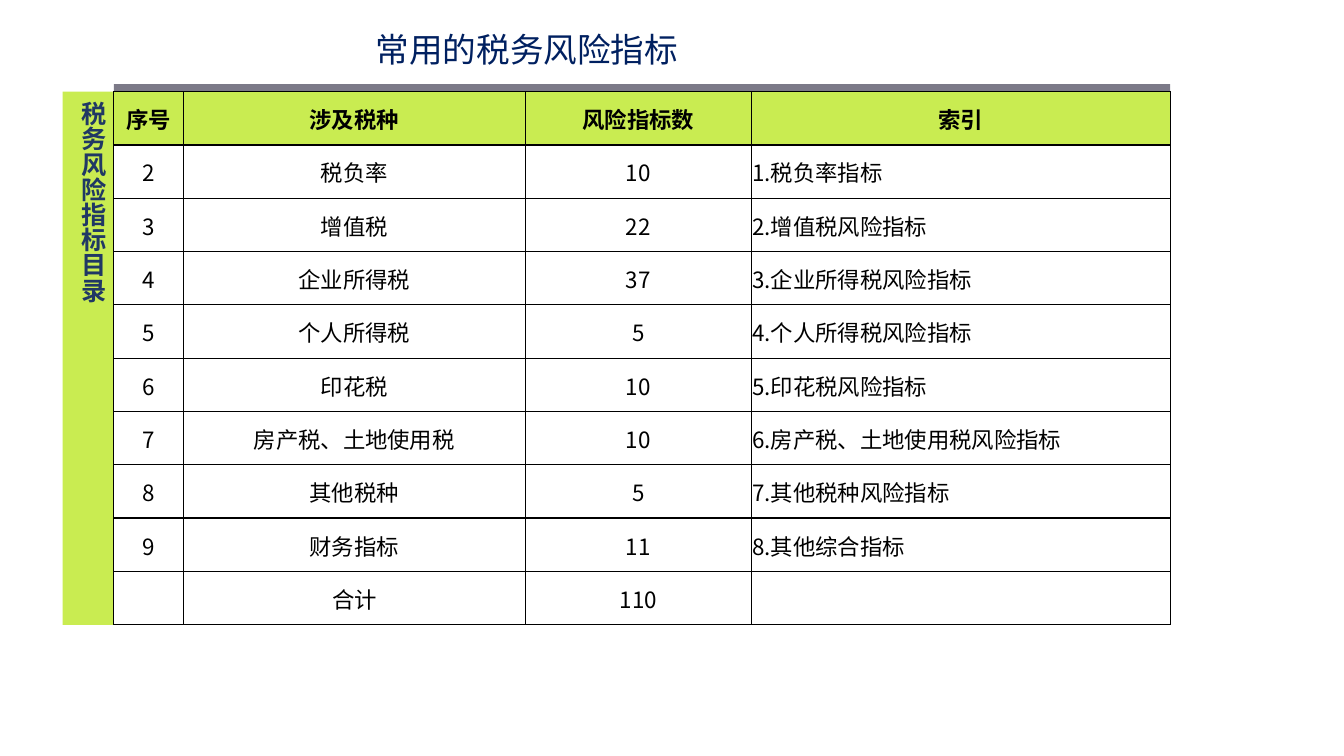
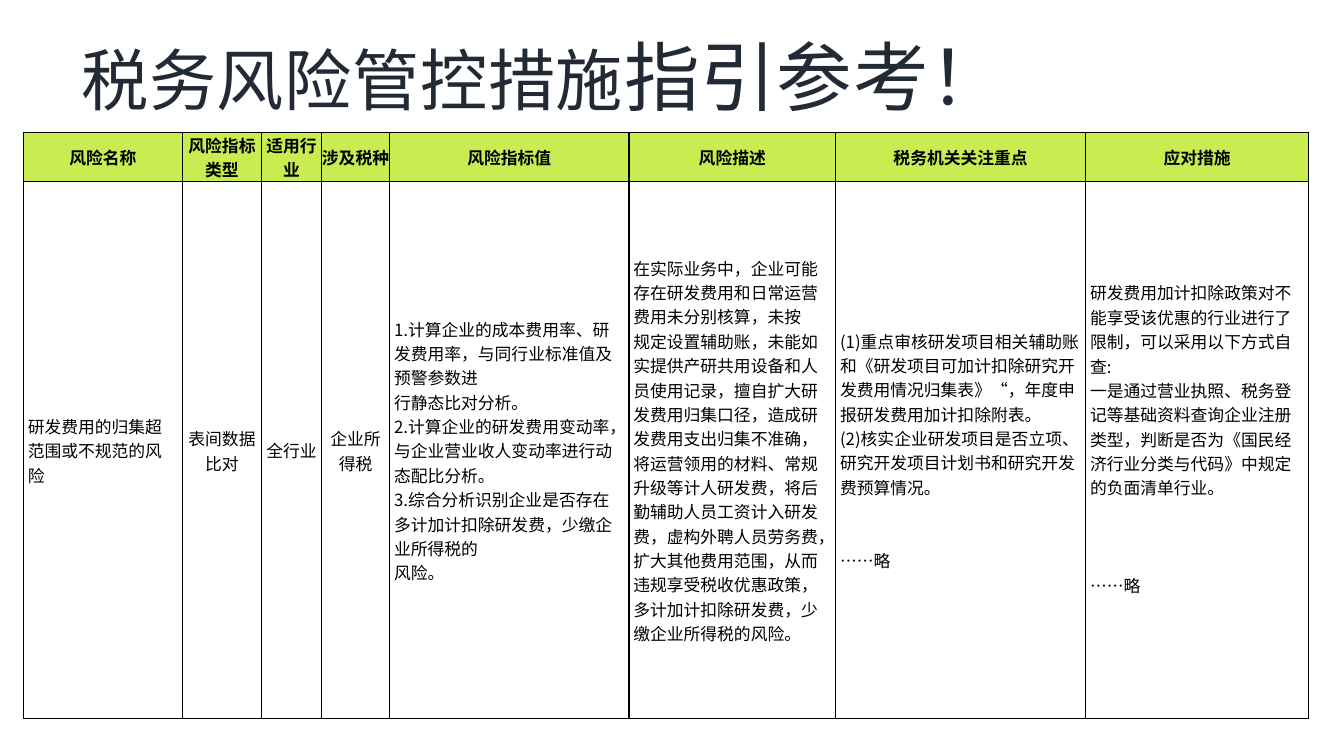
from lxml import etree
from pptx import Presentation
from pptx.dml.color import RGBColor
from pptx.enum.shapes import MSO_SHAPE
from pptx.enum.text import MSO_ANCHOR, PP_ALIGN
from pptx.oxml.ns import qn
from pptx.util import Cm, Pt

BLACK = RGBColor(0x00, 0x00, 0x00)
LIME = RGBColor(0xC9, 0xEC, 0x51)
GREY = RGBColor(0x7C, 0x7A, 0x88)
NAVY = RGBColor(0x00, 0x20, 0x60)
BLUE = RGBColor(0x20, 0x38, 0x64)
INK = RGBColor(0x22, 0x2A, 0x35)

RECTANGLE = MSO_SHAPE.RECTANGLE
TOP = MSO_ANCHOR.TOP
MIDDLE = MSO_ANCHOR.MIDDLE
LEFT = PP_ALIGN.LEFT
CENTER = PP_ALIGN.CENTER

SANS = "Noto Sans CJK SC"
LATIN = "Calibri"
BORDER_SIDES = ("a:lnL", "a:lnR", "a:lnT", "a:lnB")

INDEX_LEFT, INDEX_TOP, INDEX_HEIGHT = 2.87, 2.31, 13.44
INDEX_WIDTHS = (1.75, 8.62, 5.69, 10.56)
INDEX_ALIGNS = (CENTER, CENTER, CENTER, LEFT)
INDEX_HEADER = ("序号", "涉及税种", "风险指标数", "索引")
INDEX_ROWS = (
    ("2", "税负率", "10", "1.税负率指标"),
    ("3", "增值税", "22", "2.增值税风险指标"),
    ("4", "企业所得税", "37", "3.企业所得税风险指标"),
    ("5", "个人所得税", "5", "4.个人所得税风险指标"),
    ("6", "印花税", "10", "5.印花税风险指标"),
    ("7", "房产税、土地使用税", "10", "6.房产税、土地使用税风险指标"),
    ("8", "其他税种", "5", "7.其他税种风险指标"),
    ("9", "财务指标", "11", "8.其他综合指标"),
    ("", "合计", "110", ""),
)

GUIDE_WIDTHS = (4.01, 1.99, 1.51, 1.72, 6.03, 5.21, 6.3, 5.62)
GUIDE_HEIGHTS = (1.23, 13.54)
GUIDE_ALIGNS = (LEFT, CENTER, CENTER, CENTER, LEFT, LEFT, LEFT, LEFT)
GUIDE_HEADER = (
    "风险名称", "风险指标类型", "适用行业", "涉及税种",
    "风险指标值", "风险描述", "税务机关关注重点", "应对措施",
)
GUIDE_ROW = (
    "研发费用的归集超范围或不规范的风险",
    "表间数据比对",
    "全行业",
    "企业所得税",
    "1.计算企业的成本费用率、研发费用率，与同行业标准值及预警参数进\n"
    "行静态比对分析。\n"
    "2.计算企业的研发费用变动率，与企业营业收人变动率进行动态配比分析。\n"
    "3.综合分析识别企业是否存在多计加计扣除研发费，少缴企业所得税的\n"
    "风险。",
    "在实际业务中，企业可能存在研发费用和日常运营费用未分别核算，未按\n"
    "规定设置辅助账，未能如实提供产研共用设备和人员使用记录，"
    "擅自扩大研发费用归集口径，造成研发费用支出归集不准确，"
    "将运营领用的材料、常规升级等计人研发费，将后勤辅助人员工资计入研发费，"
    "虚构外聘人员劳务费，扩大其他费用范围，从而违规享受税收优惠政策，"
    "多计加计扣除研发费，少缴企业所得税的风险。",
    "(1)重点审核研发项目相关辅助账和《研发项目可加计扣除研究开发费用情况归集表》"
    "“，年度申报研发费用加计扣除附表。\n"
    "(2)核实企业研发项目是否立项、研究开发项目计划书和研究开发费预算情况。\n"
    "……略",
    "研发费用加计扣除政策对不能享受该优惠的行业进行了限制，可以采用以下方式自查:\n"
    "一是通过营业执照、税务登记等基础资料查询企业注册类型，"
    "判断是否为《国民经济行业分类与代码》中规定的负面清单行业。\n"
    "……略",
)
CLOSING_GAPS = {6: 35, 7: 52}
BOTTOM_MARGINS = {7: 0.6}


def set_attributes(target, values):
    for name, value in values.items():
        setattr(target, name, value)


def margins(side, top, bottom):
    return {
        "margin_left": Cm(side), "margin_right": Cm(side),
        "margin_top": Cm(top), "margin_bottom": Cm(bottom),
    }


def add_span(para, text, size, color, font=SANS, bold=False, spacing=0):
    span = para.add_run()
    span.text = text
    set_attributes(span.font, {"name": font, "size": Pt(size), "bold": bold})
    span.font.color.rgb = color
    properties = span.font._element
    etree.SubElement(properties, qn("a:ea"), typeface=font)
    if spacing:
        properties.set("spc", str(spacing))


def add_title(page, place, spans, color, spacing=0, line_spacing=1.0):
    box = page.shapes.add_textbox(*map(Cm, place))
    frame = box.text_frame
    values = {"word_wrap": True, "vertical_anchor": MIDDLE}
    set_attributes(frame, values | margins(0.25, 0, 0))
    para = frame.paragraphs[0]
    para.line_spacing = line_spacing
    for text, size in spans:
        add_span(para, text, size, color, spacing=spacing)


def add_band(page, place, color):
    band = page.shapes.add_shape(RECTANGLE, *map(Cm, place))
    band.shadow.inherit = False
    band.fill.solid()
    band.fill.fore_color.rgb = color
    band.line.fill.background()
    return band


def add_vertical_label(band, text):
    frame = band.text_frame
    frame.vertical_anchor = TOP
    frame._txBody.bodyPr.set("vert", "eaVert")
    para = frame.paragraphs[0]
    para.alignment = LEFT
    add_span(para, text, 18, BLUE, font=LATIN, bold=True)


def add_borders(cell):
    properties = cell._tc.get_or_add_tcPr()
    for side in BORDER_SIDES:
        line = etree.SubElement(properties, qn(side), w=str(Pt(1)))
        fill = etree.SubElement(line, qn("a:solidFill"))
        etree.SubElement(fill, qn("a:srgbClr"), val=str(BLACK))


def fill_cell(cell, text, align, size, insets, header):
    add_borders(cell)
    if header:
        cell.fill.solid()
        cell.fill.fore_color.rgb = LIME
    else:
        cell.fill.background()
    set_attributes(cell, {"vertical_anchor": MIDDLE} | insets)
    frame = cell.text_frame
    for number, line in enumerate(text.split("\n")):
        para = frame.add_paragraph() if number else frame.paragraphs[0]
        para.alignment = CENTER if header else align
        if line:
            add_span(para, line, size, BLACK, bold=header)


def add_grid(page, left, top, widths, heights, rows, aligns, size,
             header_insets, body_insets):
    frame = page.shapes.add_table(
        len(rows), len(widths), Cm(left), Cm(top), Cm(sum(widths)), Cm(sum(heights)))
    table = frame.table
    set_attributes(table, {"first_row": False, "horz_banding": False})
    for column, width in zip(table.columns, widths):
        column.width = Cm(width)
    for row, height in zip(table.rows, heights):
        row.height = Cm(height)
    for r, texts in enumerate(rows):
        header = r == 0
        insets = header_insets if header else body_insets
        for c, text in enumerate(texts):
            fill_cell(table.cell(r, c), text, aligns[c], size, insets, header)
    return table


def build_index(page):
    add_band(page, (INDEX_LEFT, 2.12, sum(INDEX_WIDTHS), 0.2), GREY)
    add_title(page, (9.22, 0.61, 19.1, 1.27), [("常用的税务风险指标", 24)], NAVY)
    side = add_band(page, (1.58, INDEX_TOP, 1.28, INDEX_HEIGHT), LIME)
    add_vertical_label(side, "税务风险指标目录")
    rows = (INDEX_HEADER, *INDEX_ROWS)
    heights = [INDEX_HEIGHT / len(rows)] * len(rows)
    insets = margins(0.03, 0.03, 0)
    add_grid(page, INDEX_LEFT, INDEX_TOP, INDEX_WIDTHS, heights, rows,
             INDEX_ALIGNS, 16, insets, insets)


def build_guide(page):
    spans = [("税务风险管控措施", 48), ("指引参考！", 54)]
    add_title(page, (1.8, 1, 32.05, 2.24), spans, INK, spacing=50, line_spacing=0.8)
    table = add_grid(page, 0.59, 3.34, GUIDE_WIDTHS, GUIDE_HEIGHTS,
                     (GUIDE_HEADER, GUIDE_ROW), GUIDE_ALIGNS, 12,
                     margins(0, 0, 0), margins(0.11, 0.03, 0))
    for column, gap in CLOSING_GAPS.items():
        table.cell(1, column).text_frame.paragraphs[-1].space_before = Pt(gap)
    for column, margin in BOTTOM_MARGINS.items():
        table.cell(1, column).margin_bottom = Cm(margin)


def main():
    deck = Presentation()
    set_attributes(deck, {"slide_width": Cm(33.87), "slide_height": Cm(19.05)})
    for build in (build_index, build_guide):
        build(deck.slides.add_slide(deck.slide_layouts[6]))
    deck.save("out.pptx")


if __name__ == "__main__":
    main()
